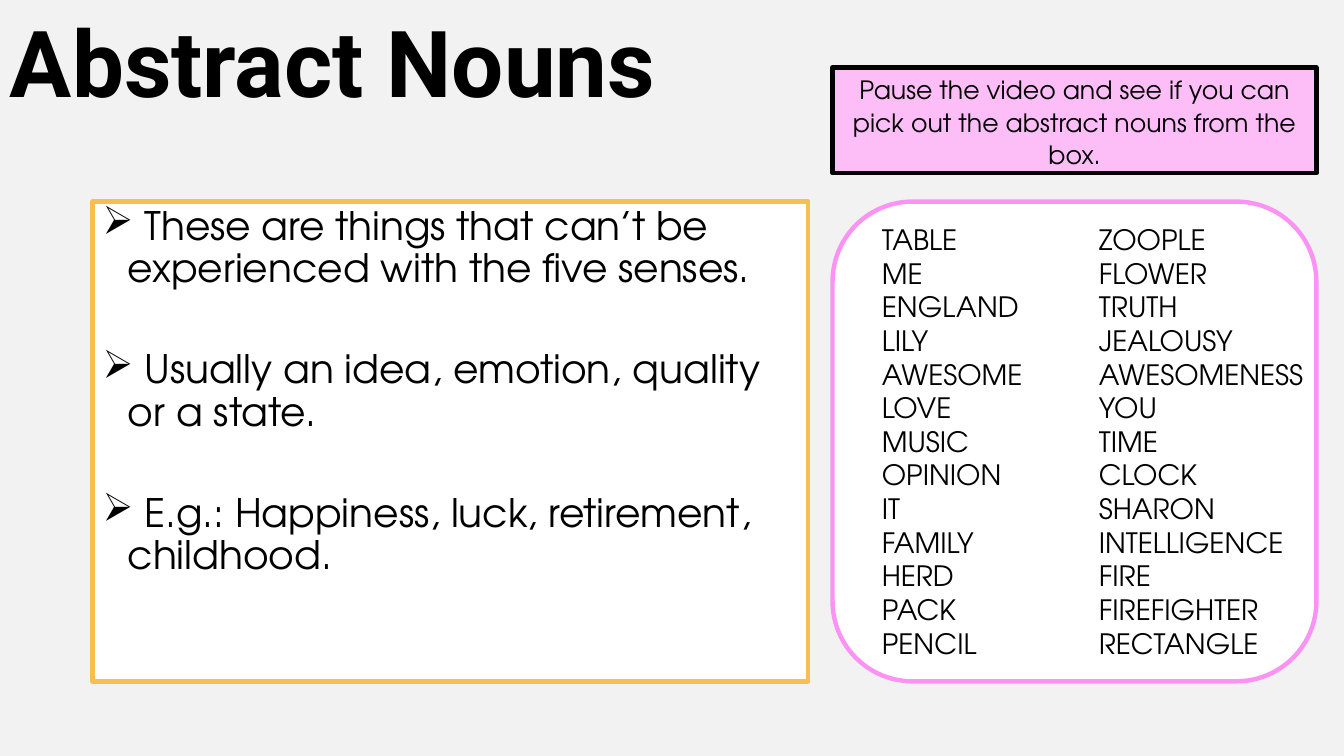
"""Build a slide on abstract nouns with a word box to pick from."""
from lxml.etree import SubElement
from pptx import Presentation
from pptx.dml.color import RGBColor
from pptx.enum.shapes import MSO_SHAPE
from pptx.enum.text import MSO_ANCHOR, PP_ALIGN
from pptx.oxml.ns import qn
from pptx.util import Pt

BLACK = RGBColor(0x00, 0x00, 0x00)
WHITE = RGBColor(0xFF, 0xFF, 0xFF)
GREY = RGBColor(0xF2, 0xF2, 0xF2)
GOLD = RGBColor(0xF6, 0xBF, 0x50)
PINK = RGBColor(0xFC, 0x92, 0xF4)
BLUSH = RGBColor(0xFD, 0xBE, 0xF8)

FACTS = [
    " These are things that can’t be experienced with the five senses.",
    " Usually an idea, emotion, quality or a state.",
    " E.g.: Happiness, luck, retirement, childhood.",
]
WORDS = [
    ["TABLE", "ME", "ENGLAND", "LILY", "AWESOME", "LOVE", "MUSIC",
     "OPINION", "IT", "FAMILY", "HERD", "PACK", "PENCIL"],
    ["ZOOPLE", "FLOWER", "TRUTH", "JEALOUSY", "AWESOMENESS", "YOU", "TIME",
     "CLOCK", "SHARON", "INTELLIGENCE", "FIRE", "FIREFIGHTER", "RECTANGLE"],
]


class Page:
    """Holds the style and the current slide."""

    head = "Roboto"
    body = "TeX Gyre Adventor"
    edge = Pt(3.15)

    def __init__(self, slide):
        self.slide = slide
        fill = slide.background.fill
        fill.solid()
        fill.fore_color.rgb = GREY

    def panel(self, box, fill, line, kind=MSO_SHAPE.RECTANGLE):
        shape = self.slide.shapes.add_shape(kind, *map(Pt, box))
        shape.shadow.inherit = False
        shape.fill.solid()
        shape.fill.fore_color.rgb = fill
        shape.line.color.rgb = line
        shape.line.width = self.edge
        return shape

    def label(self, box):
        return self.slide.shapes.add_textbox(*map(Pt, box))

    def letter(self, shape, lines, size, font=None, bold=False,
               align=PP_ALIGN.LEFT, anchor=MSO_ANCHOR.TOP, space=1.0, after=0):
        frame = shape.text_frame
        frame.word_wrap = True
        frame.vertical_anchor = anchor
        frame.text = "\n".join(lines)
        for para in frame.paragraphs:
            para.alignment = align
            para.line_spacing = space
            para.space_after = Pt(after)
            para.font.name = font or self.body
            para.font.size = Pt(size)
            para.font.bold = bold
            para.font.color.rgb = BLACK

    def bullet(self, shape, mark, indent):
        for para in shape.text_frame.paragraphs:
            props = para._p.get_or_add_pPr()
            props.set("marL", str(Pt(indent)))
            props.set("indent", str(-Pt(indent)))
            sign = SubElement(props, qn("a:buChar"))
            sign.set("char", mark)
            props.remove(sign)
            props.insert_element_before(sign, "a:tabLst", "a:defRPr", "a:extLst")


def main():
    deck = Presentation()
    deck.slide_width, deck.slide_height = Pt(960), Pt(540)
    page = Page(deck.slides.add_slide(deck.slide_layouts[6]))

    title = page.label((0, 0, 960, 96.5))
    page.letter(title, ["Abstract Nouns"], 66, font=page.head, bold=True,
                anchor=MSO_ANCHOR.MIDDLE, space=0.9)

    facts = page.panel((66.2, 144, 511.2, 342.7), WHITE, GOLD)
    page.letter(facts, FACTS, 28, space=0.9, after=42)
    page.bullet(facts, "➢", 18)

    page.panel((594.7, 144, 345.6, 342.7), WHITE, PINK,
               MSO_SHAPE.ROUNDED_RECTANGLE)
    for col, words in enumerate(WORDS):
        group = page.label((622.8 + 155 * col, 155.5, 170, 320))
        page.letter(group, words, 20)

    task = page.panel((594.7, 48.2, 345.6, 75.6), BLUSH, BLACK)
    page.letter(task, ["Pause the video and see if you can pick out "
                       "the abstract nouns from the box."],
                18, align=PP_ALIGN.CENTER, space=1.07, after=8)

    deck.save("out.pptx")


if __name__ == "__main__":
    main()
